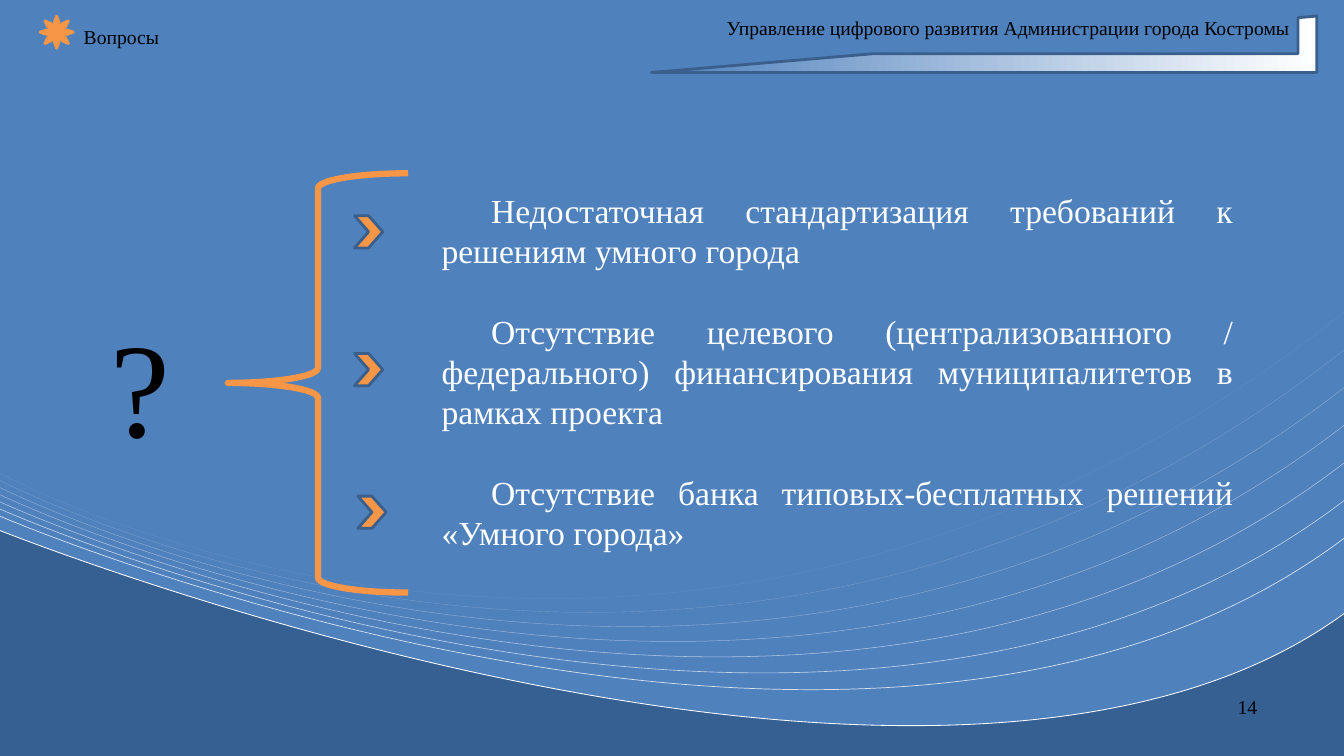
from dataclasses import dataclass

from lxml.etree import SubElement
from pptx import Presentation
from pptx.dml.color import RGBColor
from pptx.enum.shapes import MSO_SHAPE
from pptx.enum.text import MSO_ANCHOR, MSO_AUTO_SIZE, PP_ALIGN
from pptx.oxml.ns import qn
from pptx.util import Pt


@dataclass(frozen=True)
class Theme:
    font: str = "Times New Roman"
    small: float = 14
    body: float = 24
    body_line: float = 28.8
    mark: float = 96
    deep: str = "376092"
    blue: str = "4F81BD"
    outline: str = "3A5F8C"
    orange: str = "F79646"
    white: str = "FFFFFF"
    black: str = "000000"


def color(value):
    return RGBColor.from_string(value)


def write_text(frame, paragraphs, *, font, size, ink, align=PP_ALIGN.LEFT,
               wrap=True, indent=0, line=None, gap=0):
    frame.word_wrap = wrap
    frame.auto_size = MSO_AUTO_SIZE.NONE
    frame.vertical_anchor = MSO_ANCHOR.TOP
    for index, text in enumerate(paragraphs):
        paragraph = frame.add_paragraph() if index else frame.paragraphs[0]
        paragraph.alignment = align
        paragraph.space_before = Pt(gap if index else 0)
        if line:
            paragraph.line_spacing = Pt(line)
        if indent:
            properties = paragraph._p.get_or_add_pPr()
            properties.set("marL", "0")
            properties.set("indent", str(Pt(indent)))
        run = paragraph.add_run()
        run.text = text
        run.font.name = font
        run.font.size = Pt(size)
        run.font.color.rgb = color(ink)


class SlideBuilder:
    def __init__(self, slide, theme):
        self.slide = slide
        self.theme = theme

    def background(self, fill):
        self.slide.background.fill.solid()
        self.slide.background.fill.fore_color.rgb = color(fill)

    def paint(self, shape, fill=None, line=None, width=2, opacity=100):
        shape.shadow.inherit = False
        if fill:
            shape.fill.solid()
            shape.fill.fore_color.rgb = color(fill)
        else:
            shape.fill.background()
        if not line:
            shape.line.fill.background()
            return
        shape.line.color.rgb = color(line)
        shape.line.width = Pt(width)
        if opacity < 100:
            ink = shape.line._ln.find(".//" + qn("a:srgbClr"))
            SubElement(ink, qn("a:alpha")).set("val", str(round(opacity * 1000)))

    def curve(self, size, start, control, end, corners=(), **style):
        """Cubic curve from the left edge, closed through any corners."""
        width, height = map(Pt, size)
        builder = self.slide.shapes.build_freeform(0, 0)
        builder.add_line_segments([(width, 0), (width, height), (0, height)])
        shape = builder.convert_to_shape()
        outline = shape.element.find(".//" + qn("a:path"))
        for segment in list(outline):
            outline.remove(segment)
        segments = [("a:moveTo", [start]), ("a:cubicBezTo", [start, control, end])]
        segments += [("a:lnTo", [corner]) for corner in corners]
        for tag, points in segments:
            segment = SubElement(outline, qn(tag))
            for x, y in points:
                point = SubElement(segment, qn("a:pt"))
                point.set("x", str(Pt(x)))
                point.set("y", str(Pt(y)))
        if corners:
            SubElement(outline, qn("a:close"))
        else:
            outline.set("fill", "none")
        self.paint(shape, **style)

    def preset(self, kind, box, adjustments, **style):
        shape = self.slide.shapes.add_shape(kind, *map(Pt, box))
        for index, value in enumerate(adjustments):
            shape.adjustments[index] = value
        self.paint(shape, **style)
        return shape

    def gradient(self, shape, colors, angle):
        shape.fill.gradient()
        shape.fill.gradient_angle = angle
        for position, (stop, value) in enumerate(zip(shape.fill.gradient_stops, colors)):
            stop.position = position
            stop.color.rgb = color(value)

    def text(self, box, *paragraphs, size=None, ink=None, **style):
        frame = self.slide.shapes.add_textbox(*map(Pt, box)).text_frame
        write_text(frame, paragraphs, font=self.theme.font,
                   size=size or self.theme.small, ink=ink or self.theme.black, **style)

    def title(self, box, text):
        title = self.slide.shapes.title
        title.left, title.top, title.width, title.height = map(Pt, box)
        write_text(title.text_frame, [text], font=self.theme.font,
                   size=self.theme.small, ink=self.theme.black)
        # Bring the title in front of the backdrop
        title.element.getparent().append(title.element)


def main():
    theme = Theme()
    presentation = Presentation()
    presentation.slide_width, presentation.slide_height = Pt(960), Pt(540)
    slide = presentation.slides.add_slide(presentation.slide_layouts[5])
    builder = SlideBuilder(slide, theme)

    # Backdrop: blue field and fading waves, the second step left open
    field = (960, 538.6)
    builder.background(theme.deep)
    builder.curve(field, (0, 378.7), (672.5, 648.7), (960, 437.8),
                  corners=[(960, 0), (0, 0)], fill=theme.blue)
    for wave in (0, 2, 3, 4, 5, 6, 7, 8):
        builder.curve(field, (-0.7, 378.7 - 5.13 * wave),
                      (674 - 24.2 * wave, 648.7 - 5.76 * wave),
                      (960.7, 437.8 - 26.9 * wave),
                      line=theme.white, width=0.6 - 0.05 * wave,
                      opacity=100 - 11.25 * wave)

    # Header
    frame = builder.preset(MSO_SHAPE.HALF_FRAME, (465.3, 11.5, 475.2, 40.3),
                           (0.333, 0.333), line=theme.outline)
    frame.rotation = 180
    builder.gradient(frame, (theme.blue, theme.white), 180)
    builder.text((511.9, 7.9, 418.3, 23.8),
                 "Управление цифрового развития Администрации города Костромы",
                 wrap=False)
    builder.preset(MSO_SHAPE.SUN, (28.6, 11.5, 23.8, 23), (0.25,),
                   fill=theme.orange, line=theme.orange)
    builder.title((52.6, 14.4, 319.7, 23.8), "Вопросы")

    # Slide number
    builder.text((877, 492.5, 64, 23.8), "14")

    # Issues
    builder.text((308.3, 132, 579.6, 269.3),
                 "Недостаточная стандартизация требований к решениям умного города",
                 "Отсутствие целевого (централизованного / федерального) "
                 "финансирования муниципалитетов в рамках проекта",
                 "Отсутствие банка типовых-бесплатных решений «Умного города»",
                 size=theme.body, ink=theme.white, align=PP_ALIGN.JUSTIFY,
                 indent=35.4, line=theme.body_line, gap=theme.body_line)

    # Brace, chevrons and question mark
    builder.preset(MSO_SHAPE.LEFT_BRACE, (162.7, 123.8, 128.9, 299.5),
                   (0.083, 0.5), line=theme.orange, width=4.5)
    for left, top in ((253.2, 154.1), (253.2, 252.5), (255.6, 354.4)):
        builder.preset(MSO_SHAPE.CHEVRON, (left, top, 20.2, 23), (0.5,),
                       fill=theme.orange, line=theme.outline)
    builder.text((72, 213.1, 85, 123.8), "?", size=theme.mark)

    presentation.save("out.pptx")


if __name__ == "__main__":
    main()
